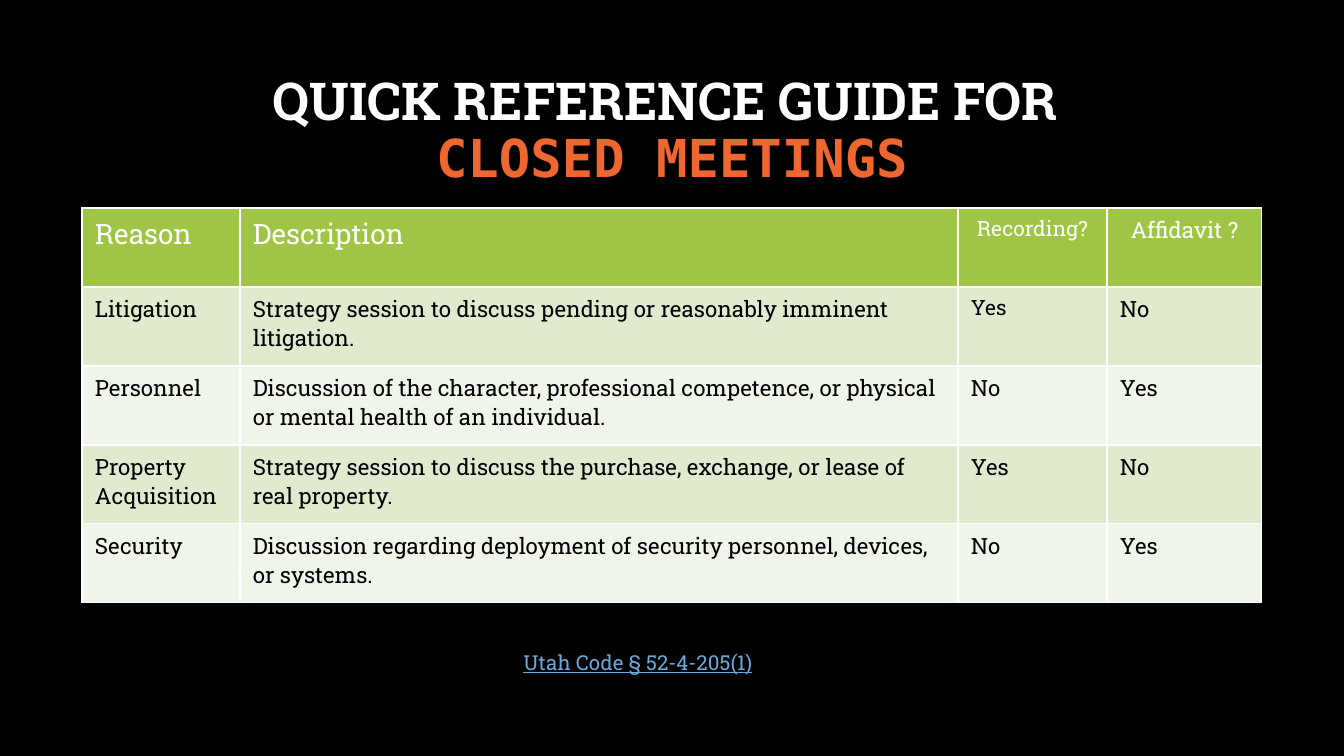
from dataclasses import dataclass

from lxml.etree import SubElement
from pptx import Presentation
from pptx.dml.color import RGBColor
from pptx.enum.text import MSO_ANCHOR, MSO_AUTO_SIZE, PP_ALIGN
from pptx.oxml.ns import qn
from pptx.util import Pt

EMU_PER_PX = 914400 / 100.8


@dataclass(frozen=True)
class Theme:
    background: str = "000000"
    white: str = "FFFFFF"
    ink: str = "000000"
    accent: str = "EF6730"
    header: str = "9EC544"
    bands: tuple = ("DFEACF", "F0F5E9")
    reference: str = "6BA9DA"
    font: str = "Roboto Slab"
    mono: str = "DejaVu Sans Mono"
    title_size: float = 37.3
    heading_size: float = 20
    body_size: float = 16
    small_size: float = 15
    reference_size: float = 14.7
    border_width: float = 1


def px(length):
    return round(length * EMU_PER_PX)


def set_attributes(target, values):
    for name, value in values.items():
        setattr(target, name, value)


class SlideBuilder:
    def __init__(self, presentation, theme):
        self.theme = theme
        self.slide = presentation.slides.add_slide(presentation.slide_layouts[5])
        fill = self.slide.background.fill
        fill.solid()
        fill.fore_color.rgb = RGBColor.from_string(theme.background)

    def run(self, paragraph, text, color, size, **formats):
        run = paragraph.add_run()
        run.text = text
        run.font.color.rgb = RGBColor.from_string(color)
        set_attributes(run.font, {"name": self.theme.font, "size": Pt(size),
                                  "bold": False, **formats})

    def title(self, box, first_line, second_line):
        theme = self.theme
        shape = self.slide.shapes.title
        set_attributes(shape, dict(zip(("left", "top", "width", "height"), map(px, box))))
        set_attributes(shape.text_frame, {"word_wrap": True, "auto_size": MSO_AUTO_SIZE.NONE,
                                          "vertical_anchor": MSO_ANCHOR.MIDDLE})
        paragraph = shape.text_frame.paragraphs[0]
        set_attributes(paragraph, {"alignment": PP_ALIGN.CENTER, "line_spacing": 0.9})
        self.run(paragraph, first_line, theme.white, theme.title_size, bold=True)
        paragraph.add_line_break()
        self.run(paragraph, second_line, theme.accent, theme.title_size,
                 bold=True, name=theme.mono)

    def reference(self, box, text):
        shape = self.slide.shapes.add_textbox(*map(px, box))
        shape.text_frame.word_wrap = True
        paragraph = shape.text_frame.paragraphs[0]
        paragraph.alignment = PP_ALIGN.CENTER
        self.run(paragraph, text, self.theme.reference, self.theme.reference_size,
                 underline=True)

    def cell(self, cell, text, fill, color, size, alignment):
        set_attributes(cell, {"margin_left": px(13), "margin_right": px(13),
                              "margin_top": px(7), "margin_bottom": px(7)})
        properties = cell._tc.get_or_add_tcPr()
        for side in ("lnL", "lnR", "lnT", "lnB"):
            line = SubElement(properties, qn(f"a:{side}"),
                              w=str(Pt(self.theme.border_width)))
            SubElement(SubElement(line, qn("a:solidFill")), qn("a:srgbClr"),
                       val=self.theme.white)
        cell.fill.solid()
        cell.fill.fore_color.rgb = RGBColor.from_string(fill)
        paragraph = cell.text_frame.paragraphs[0]
        paragraph.alignment = alignment
        self.run(paragraph, text, color, size)

    def table(self, left, top, column_widths, row_height, headings, rows, small_cells):
        """Draw a banded table; small_cells holds the (row, column) pairs in small type."""
        theme = self.theme
        row_count = len(rows) + 1
        table = self.slide.shapes.add_table(
            row_count, len(headings), px(left), px(top),
            px(sum(column_widths)), px(row_height * row_count)).table
        for column, width in zip(table.columns, column_widths):
            column.width = px(width)
        for row in table.rows:
            row.height = px(row_height)
        for index, (text, size, alignment) in enumerate(headings):
            self.cell(table.cell(0, index), text, theme.header, theme.white, size, alignment)
        for row_index, texts in enumerate(rows, start=1):
            fill = theme.bands[(row_index - 1) % 2]
            for index, text in enumerate(texts):
                small = (row_index, index) in small_cells
                size = theme.small_size if small else theme.body_size
                self.cell(table.cell(row_index, index), text, fill, theme.ink,
                          size, PP_ALIGN.LEFT)


def main():
    theme = Theme()
    presentation = Presentation()
    set_attributes(presentation, {"slide_width": px(1344), "slide_height": px(756)})
    builder = SlideBuilder(presentation, theme)
    builder.title((134, 87, 1076, 90), "QUICK REFERENCE GUIDE FOR ", "CLOSED MEETINGS")
    headings = [
        ("Reason", theme.heading_size, PP_ALIGN.LEFT),
        ("Description", theme.heading_size, PP_ALIGN.LEFT),
        ("Recording?", theme.small_size, PP_ALIGN.CENTER),
        ("Affidavit ?", theme.body_size, PP_ALIGN.CENTER),
    ]
    rows = [
        ("Litigation",
         "Strategy session to discuss pending or reasonably imminent litigation.",
         "Yes", "No"),
        ("Personnel",
         "Discussion of the character, professional competence, or physical "
         "or mental health of an individual.",
         "No", "Yes"),
        ("Property Acquisition",
         "Strategy session to discuss the purchase, exchange, or lease of real property.",
         "Yes", "No"),
        ("Security",
         "Discussion regarding deployment of security personnel, devices, or systems.",
         "No", "Yes"),
    ]
    builder.table(82, 208, (158, 718, 149, 155), 79, headings, rows, {(1, 2)})
    builder.reference((414, 645, 448, 35), "Utah Code § 52-4-205(1)")
    presentation.save("out.pptx")


if __name__ == "__main__":
    main()
